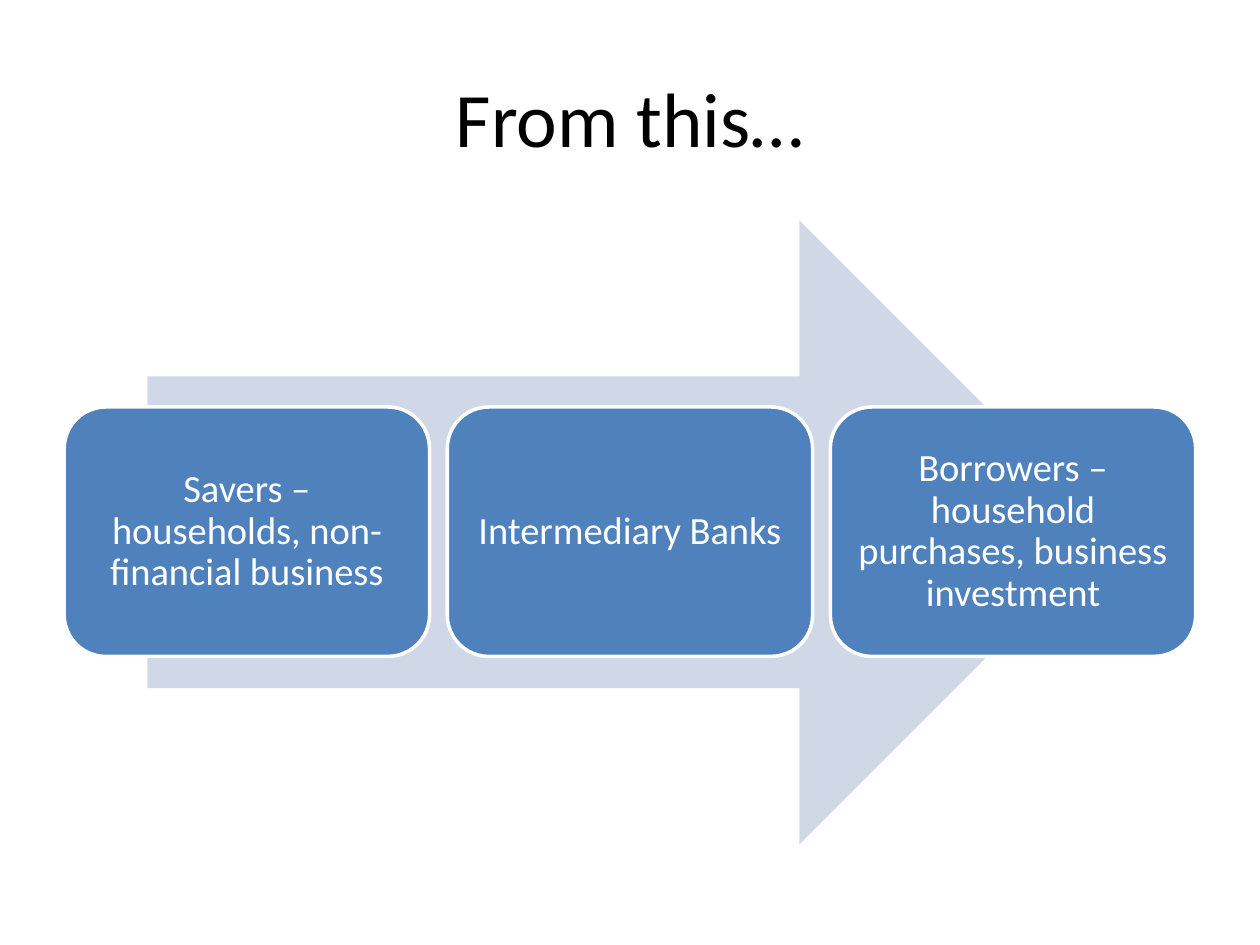
from pptx import Presentation
from pptx.dml.color import RGBColor
from pptx.enum.shapes import MSO_SHAPE
from pptx.enum.text import MSO_ANCHOR, PP_ALIGN
from pptx.util import Inches, Pt

ARROW = MSO_SHAPE.RIGHT_ARROW
ROUNDED = MSO_SHAPE.ROUNDED_RECTANGLE
MIDDLE = MSO_ANCHOR.MIDDLE
CENTER = PP_ALIGN.CENTER

BLACK = RGBColor(0x00, 0x00, 0x00)
WHITE = RGBColor(0xFF, 0xFF, 0xFF)
BLUE = RGBColor(0x4F, 0x81, 0xBD)
PALE_BLUE = RGBColor(0xD0, 0xD8, 0xE8)


class FlowSlide:
    font = "Calibri"
    title_size = Pt(44)
    stage_size = Pt(22)
    inset = Inches(0.09)

    def __init__(self, page):
        self.page = page

    def add_label(self, box, text, size, color, line_spacing=1.0):
        frame = box.text_frame
        frame.word_wrap = True
        frame.vertical_anchor = MIDDLE
        para = frame.paragraphs[0]
        para.alignment = CENTER
        para.line_spacing = line_spacing
        span = para.add_run()
        span.text = text
        span.font.name = self.font
        span.font.size = size
        span.font.color.rgb = color
        return frame

    def title(self, text, left, top, width, height):
        box = self.page.shapes.add_textbox(
            Inches(left), Inches(top), Inches(width), Inches(height))
        self.add_label(box, text, self.title_size, BLACK)

    def shape(self, kind, fill, left, top, width, height):
        shape = self.page.shapes.add_shape(
            kind, Inches(left), Inches(top), Inches(width), Inches(height))
        shape.shadow.inherit = False
        shape.fill.solid()
        shape.fill.fore_color.rgb = fill
        shape.line.fill.background()
        return shape

    def stage(self, text, left, top, width, height):
        box = self.shape(ROUNDED, BLUE, left, top, width, height)
        box.line.color.rgb = WHITE
        box.line.width = Pt(2)
        frame = self.add_label(box, text, self.stage_size, WHITE, 0.9)
        frame.margin_left = frame.margin_right = self.inset
        frame.margin_top = frame.margin_bottom = self.inset


def main():
    deck = Presentation()
    deck.slide_width, deck.slide_height = Inches(10), Inches(7.5)
    flow = FlowSlide(deck.slides.add_slide(deck.slide_layouts[6]))

    # Title
    flow.title("From this…", 0.5, 0.3, 9, 1.25)

    # Background arrow
    flow.shape(ARROW, PALE_BLUE, 1.17, 1.75, 7.65, 4.95)

    # Stages, evenly spaced from left to right
    stages = [
        "Savers – households, non-financial business",
        "Intermediary Banks",
        "Borrowers – household purchases, business investment",
    ]
    first_left, width, gap = 0.51, 2.9, 0.14
    for index, text in enumerate(stages):
        flow.stage(text, first_left + index * (width + gap), 3.23, width, 1.98)

    deck.save("out.pptx")


if __name__ == "__main__":
    main()
